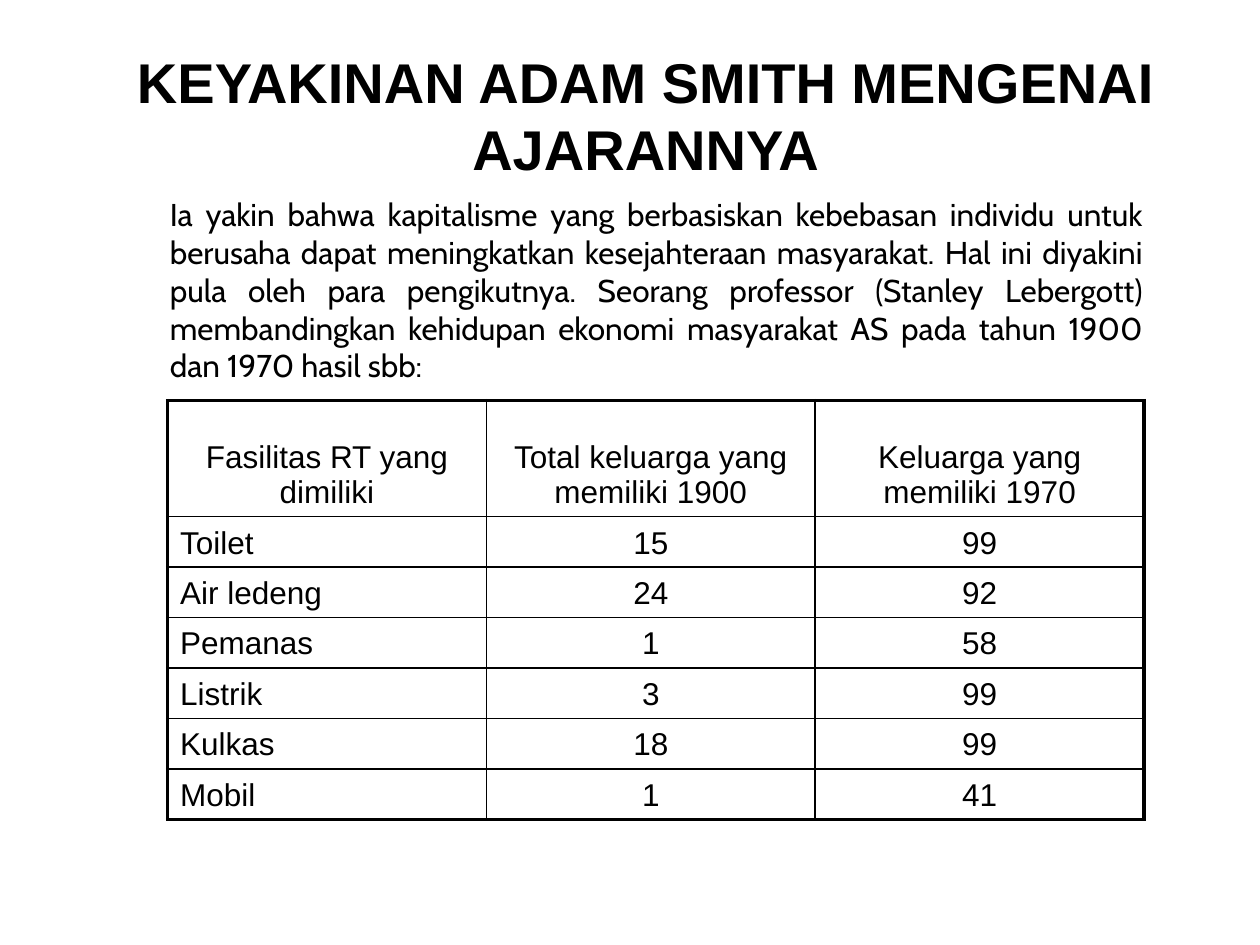
from dataclasses import dataclass

from lxml.etree import SubElement
from pptx import Presentation
from pptx.dml.color import RGBColor
from pptx.enum.text import MSO_ANCHOR as Anchor, MSO_AUTO_SIZE as AutoSize, PP_ALIGN as Align
from pptx.oxml.ns import qn
from pptx.util import Inches, Pt

TITLE = "KEYAKINAN ADAM SMITH MENGENAI AJARANNYA"
INTRO = (
    "Ia yakin bahwa kapitalisme yang berbasiskan kebebasan individu untuk berusaha "
    "dapat meningkatkan kesejahteraan masyarakat. Hal ini diyakini pula oleh para "
    "pengikutnya. Seorang professor (Stanley Lebergott) membandingkan kehidupan "
    "ekonomi masyarakat AS pada tahun 1900 dan 1970 hasil sbb:"
)
FACILITIES = [
    ("Fasilitas RT yang dimiliki", "Total keluarga yang memiliki 1900", "Keluarga yang memiliki 1970"),
    ("Toilet", "15", "99"),
    ("Air ledeng", "24", "92"),
    ("Pemanas", "1", "58"),
    ("Listrik", "3", "99"),
    ("Kulkas", "18", "99"),
    ("Mobil", "1", "41"),
]


@dataclass(frozen=True)
class Theme:
    ink: str = "000000"
    heading_font: str = "Arial"
    body_font: str = "Cabin"
    title_size: int = 32
    text_size: int = 18
    outer_line: float = 2.25
    inner_line: float = 1


def write(frame, text, *, font, size, color, bold=False, align=Align.LEFT):
    frame.word_wrap = True
    para = frame.paragraphs[0]
    para.alignment = align
    span = para.add_run()
    span.text = text
    span.font.name = font
    span.font.size = Pt(size)
    span.font.bold = bold
    span.font.color.rgb = RGBColor.from_string(color)


def set_borders(cell, widths, color):
    """Draw cell edges; widths maps L, R, T and B, in that order, to points."""
    properties = cell._tc.get_or_add_tcPr()
    for index, (side, width) in enumerate(widths.items()):
        line = properties.makeelement(qn(f"a:ln{side}"), {"w": str(Pt(width))})
        fill = SubElement(line, qn("a:solidFill"))
        SubElement(fill, qn("a:srgbClr"), val=color)
        properties.insert(index, line)


class SlideBuilder:
    def __init__(self, slide, theme):
        self.slide = slide
        self.theme = theme

    def title(self, text, left, top, width, height):
        box = self.slide.shapes.title
        box.left, box.top, box.width, box.height = map(Inches, (left, top, width, height))
        box.text_frame.vertical_anchor = Anchor.MIDDLE
        box.text_frame.auto_size = AutoSize.SHAPE_TO_FIT_TEXT
        write(box.text_frame, text, font=self.theme.heading_font, size=self.theme.title_size,
              color=self.theme.ink, bold=True, align=Align.CENTER)

    def paragraph(self, text, left, top, width, height):
        box = self.slide.shapes.add_textbox(*map(Inches, (left, top, width, height)))
        box.text_frame.auto_size = AutoSize.SHAPE_TO_FIT_TEXT
        write(box.text_frame, text, font=self.theme.body_font, size=self.theme.text_size,
              color=self.theme.ink, align=Align.JUSTIFY)

    def table(self, rows, left, top, column_widths, header_height, row_height):
        heights = [header_height] + [row_height] * (len(rows) - 1)
        frame = self.slide.shapes.add_table(
            len(rows), len(column_widths), Inches(left), Inches(top),
            Inches(sum(column_widths)), Inches(sum(heights)))
        table = frame.table
        table.first_row = table.horz_banding = False
        for column, width in zip(table.columns, column_widths):
            column.width = Inches(width)
        for row, height in zip(table.rows, heights):
            row.height = Inches(height)

        last_row, last_column = len(rows) - 1, len(column_widths) - 1
        for r, values in enumerate(rows):
            for c, text in enumerate(values):
                cell = table.cell(r, c)
                cell.fill.background()
                cell.vertical_anchor = Anchor.BOTTOM
                is_label = r > 0 and c == 0
                write(cell.text_frame, text, font=self.theme.heading_font,
                      size=self.theme.text_size, color=self.theme.ink,
                      align=Align.JUSTIFY if is_label else Align.CENTER)
                on_edge = {"L": c == 0, "R": c == last_column, "T": r == 0, "B": r == last_row}
                widths = {side: self.theme.outer_line if outer else self.theme.inner_line
                          for side, outer in on_edge.items()}
                set_borders(cell, widths, self.theme.ink)


def main():
    deck = Presentation()
    deck.slide_width, deck.slide_height = Inches(10), Inches(7.5)
    title_only = deck.slide_layouts[5]
    page = SlideBuilder(deck.slides.add_slide(title_only), Theme())
    page.title(TITLE, 0.75, 0.32, 8.75, 1.18)
    page.paragraph(INTRO, 1.25, 1.5, 7.92, 1.6)
    page.table(FACILITIES, 1.33, 3.18, column_widths=(2.53, 2.61, 2.61),
               header_height=0.92, row_height=0.4)
    deck.save("out.pptx")


if __name__ == "__main__":
    main()
